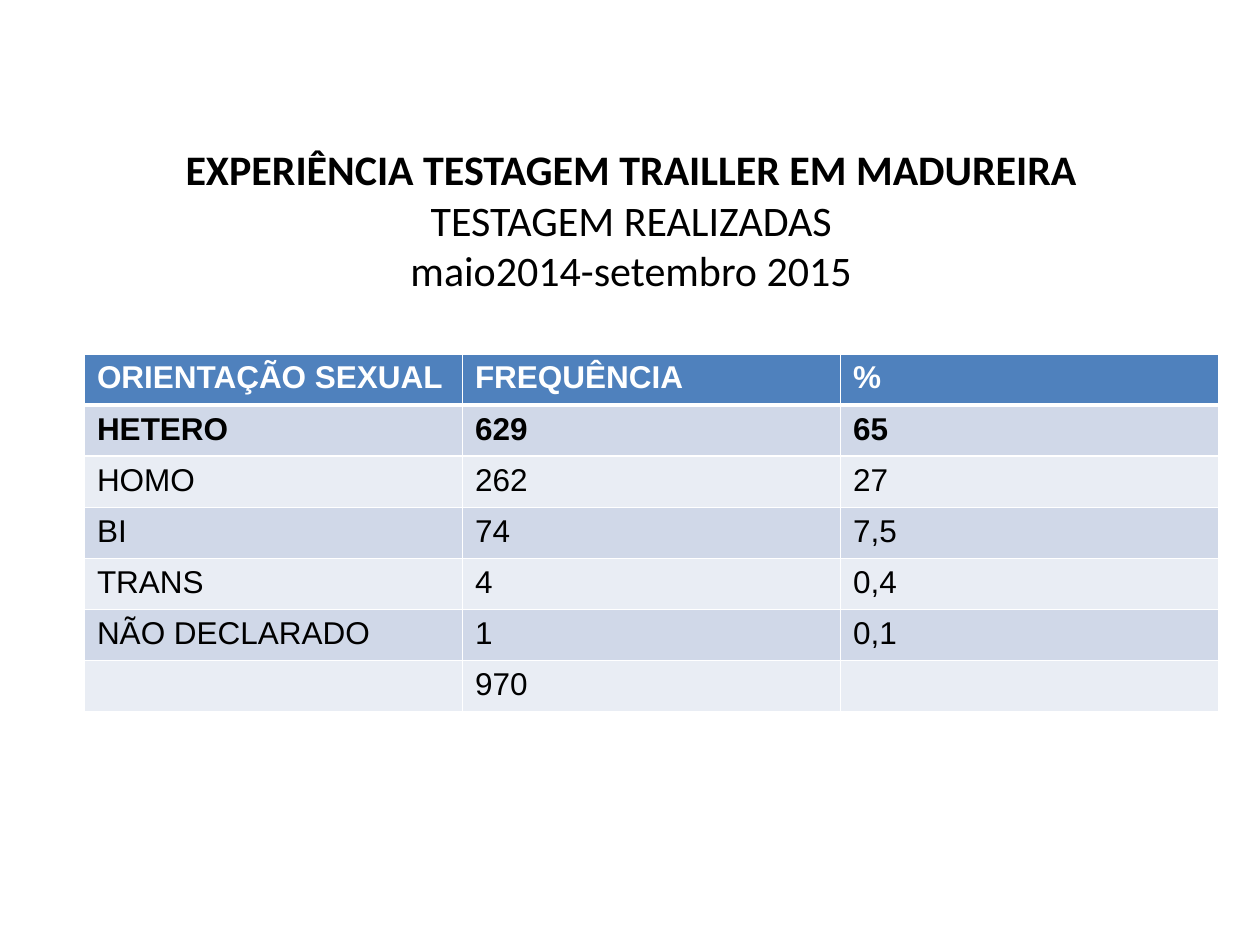
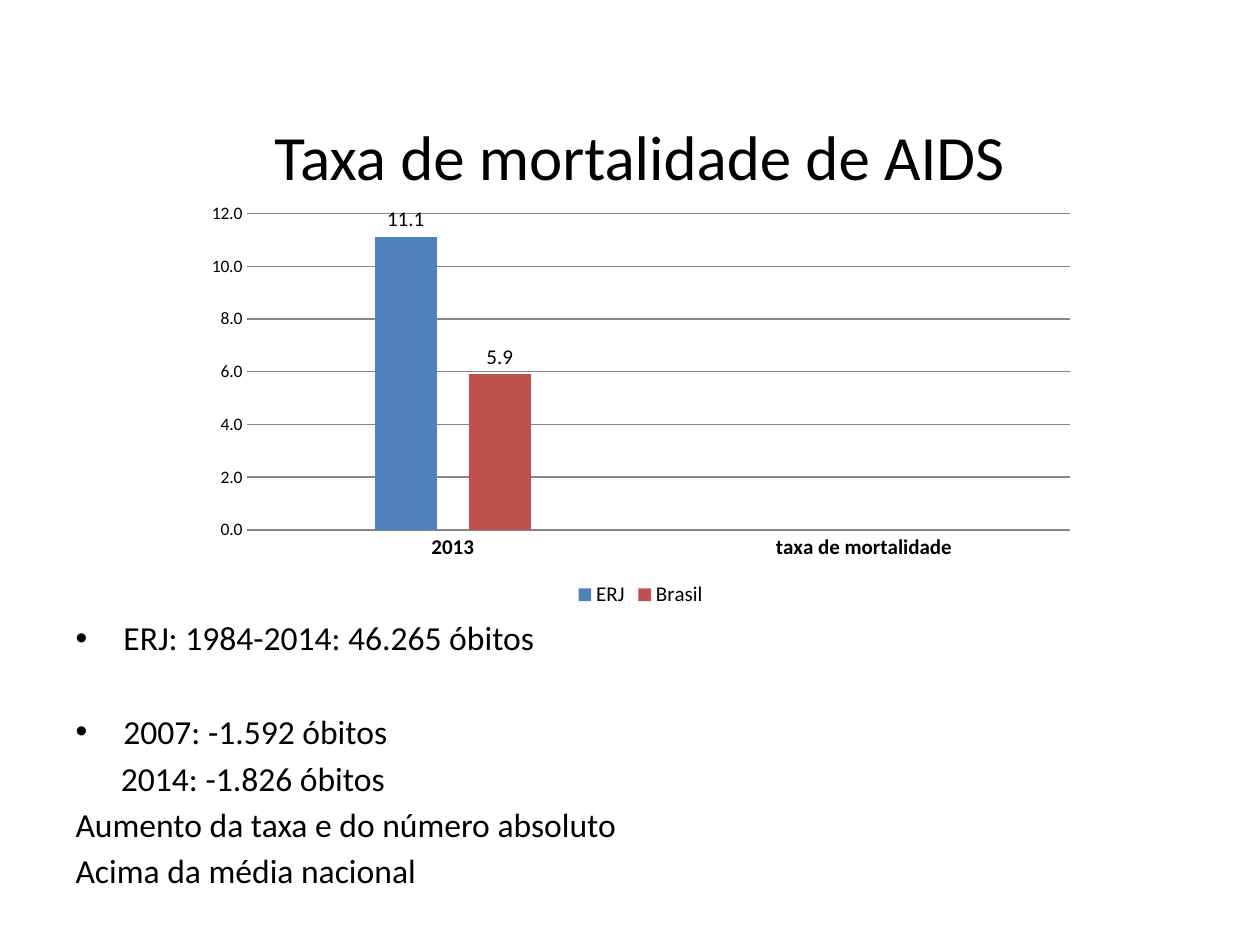
from lxml import etree
from pptx import Presentation
from pptx import util as u
from pptx.chart.data import CategoryChartData
from pptx.dml.color import RGBColor
from pptx.enum import chart as charts, text
from pptx.oxml.ns import qn

# Content
TESTING_TITLE = [("EXPERIÊNCIA TESTAGEM TRAILLER EM MADUREIRA", True),
                 ("TESTAGEM REALIZADAS", False),
                 ("maio2014-setembro 2015", False)]
ORIENTATION_ROWS = [
    ("ORIENTAÇÃO SEXUAL", "FREQUÊNCIA", "%"),
    ("HETERO", "629", "65"),
    ("HOMO", "262", "27"),
    ("BI", "74", "7,5"),
    ("TRANS", "4", "0,4"),
    ("NÃO DECLARADO", "1", "0,1"),
    ("", "970", ""),
]
BOLD_ROWS = (0, 1)

MORTALITY_TITLE = [("Taxa de mortalidade de AIDS", False)]
CATEGORIES = ["2013", "taxa de mortalidade"]
SERIES = [("ERJ", [11.1, None], "blue"), ("Brasil", [5.9, None], "red")]
# Text, bullet, left margin (inches), space before (points)
DEATH_NOTES = [
    ("ERJ: 1984-2014: 46.265 óbitos", True, 0.38, 0),
    ("2007: -1.592 óbitos", True, 0.38, 30.5),
    ("2014: -1.826 óbitos", False, 0.36, 3.5),
    ("Aumento da taxa e do número absoluto", False, 0, 3.5),
    ("Acima da média nacional", False, 0, 3.5),
]

# Shared style
COLORS = {"black": "000000", "white": "FFFFFF", "blue": "4F81BD", "red": "C0504D",
          "band_dark": "D0D8E8", "band_light": "E9EDF4", "grid": "868686"}
TITLE_FONT, TABLE_FONT = "Calibri", "Arial"


def color(name):
    return RGBColor.from_string(COLORS[name])


def style_font(font, size, face=TITLE_FONT, bold=False, tint="black"):
    font.name, font.size, font.bold = face, u.Pt(size), bold
    font.color.rgb = color(tint)


def place(shape, left, top, width, height):
    shape.left, shape.top = u.Inches(left), u.Inches(top)
    shape.width, shape.height = u.Inches(width), u.Inches(height)


def add_slide(deck, layout, title_lines, size, *position):
    page = deck.slides.add_slide(deck.slide_layouts[layout])
    page.background.fill.solid()
    page.background.fill.fore_color.rgb = color("white")
    title = page.shapes.title
    place(title, *position)
    frame = title.text_frame
    frame.auto_size = text.MSO_AUTO_SIZE.NONE
    frame.vertical_anchor = text.MSO_ANCHOR.MIDDLE
    para = frame.paragraphs[0]
    para.alignment = text.PP_ALIGN.CENTER
    for index, (line, bold) in enumerate(title_lines):
        if index:
            para.add_line_break()
        span = para.add_run()
        span.text = line
        style_font(span.font, size, bold=bold)
    return page


def add_borders(cell, bottom_width):
    properties = cell._tc.get_or_add_tcPr()
    for side, width in (("lnL", 1), ("lnR", 1), ("lnT", 1), ("lnB", bottom_width)):
        line = etree.SubElement(properties, qn("a:" + side), w=str(u.Pt(width)))
        fill = etree.SubElement(line, qn("a:solidFill"))
        etree.SubElement(fill, qn("a:srgbClr"), val=COLORS["white"])


def add_orientation_table(page):
    table = page.shapes.add_table(
        len(ORIENTATION_ROWS), len(ORIENTATION_ROWS[0]),
        u.Inches(0.67), u.Inches(2.81), u.Inches(9), u.Inches(2.84)).table
    for row, values in enumerate(ORIENTATION_ROWS):
        header = row == 0
        band = "blue" if header else ("band_light", "band_dark")[row % 2]
        for column, value in enumerate(values):
            cell = table.cell(row, column)
            add_borders(cell, 3 if header else 1)
            cell.fill.solid()
            cell.fill.fore_color.rgb = color(band)
            para = cell.text_frame.paragraphs[0]
            if value:
                span = para.add_run()
                span.text = value
                style_font(span.font, 18, TABLE_FONT, row in BOLD_ROWS,
                           "white" if header else "black")


def add_death_notes(page):
    body = page.placeholders[1]
    place(body, 0.5, 4.85, 9, 2.13)
    frame = body.text_frame
    frame.auto_size = text.MSO_AUTO_SIZE.NONE
    frame.word_wrap = True
    for index, (note, bullet, margin, space) in enumerate(DEATH_NOTES):
        para = frame.add_paragraph() if index else frame.paragraphs[0]
        para.space_before = u.Pt(space)
        properties = para._p.get_or_add_pPr()
        properties.set("marL", str(u.Inches(margin)))
        properties.set("indent", str(-u.Inches(margin) if bullet else 0))
        if bullet:
            etree.SubElement(properties, qn("a:buChar"), char="•")
        else:
            etree.SubElement(properties, qn("a:buNone"))
        span = para.add_run()
        span.text = note
        style_font(span.font, 19.2)


def add_mortality_chart(page):
    data = CategoryChartData(number_format="0.0")
    data.categories = CATEGORIES
    for name, values, _ in SERIES:
        data.add_series(name, values)
    chart = page.shapes.add_chart(
        charts.XL_CHART_TYPE.COLUMN_CLUSTERED, u.Inches(1.54), u.Inches(1.55),
        u.Inches(7.09), u.Inches(3.31), data).chart
    style_font(chart.font, 10)
    chart.has_title = False
    chart.has_legend = True
    chart.legend.position = charts.XL_LEGEND_POSITION.BOTTOM
    chart.legend.include_in_layout = False
    style_font(chart.legend.font, 12)

    # Axes
    years, rates = chart.category_axis, chart.value_axis
    for axis in (years, rates):
        axis.major_tick_mark = axis.minor_tick_mark = charts.XL_TICK_MARK.NONE
    style_font(years.tick_labels.font, 12, bold=True)
    style_font(rates.tick_labels.font, 10)
    rates.minimum_scale, rates.maximum_scale, rates.major_unit = 0, 12, 2
    rates.tick_labels.number_format = "0.0"
    rates.tick_labels.number_format_is_linked = False
    rates.format.line.fill.background()
    rates.has_major_gridlines = True
    for line in (years.format.line, rates.major_gridlines.format.line):
        line.color.rgb = color("grid")
        line.width = u.Pt(0.75)

    # Columns and their labels
    plot = chart.plots[0]
    plot.gap_width, plot.overlap, plot.vary_by_categories = 413, -52, False
    for series, (_, _, tint) in zip(plot.series, SERIES):
        series.format.fill.solid()
        series.format.fill.fore_color.rgb = color(tint)
        labels = series.data_labels
        labels.show_value = True
        labels.number_format, labels.number_format_is_linked = "0.0", False
        labels.position = charts.XL_LABEL_POSITION.OUTSIDE_END
        style_font(labels.font, 12)


def main():
    deck = Presentation()
    deck.slide_width, deck.slide_height = u.Inches(10), u.Inches(7.5)

    page = add_slide(deck, 5, TESTING_TITLE, 24, 0.51, 0.92, 9, 1.64)
    add_orientation_table(page)

    page = add_slide(deck, 1, MORTALITY_TITLE, 36, 1.14, 0.84, 7.87, 0.78)
    add_death_notes(page)
    add_mortality_chart(page)

    deck.save("out.pptx")


if __name__ == "__main__":
    main()
